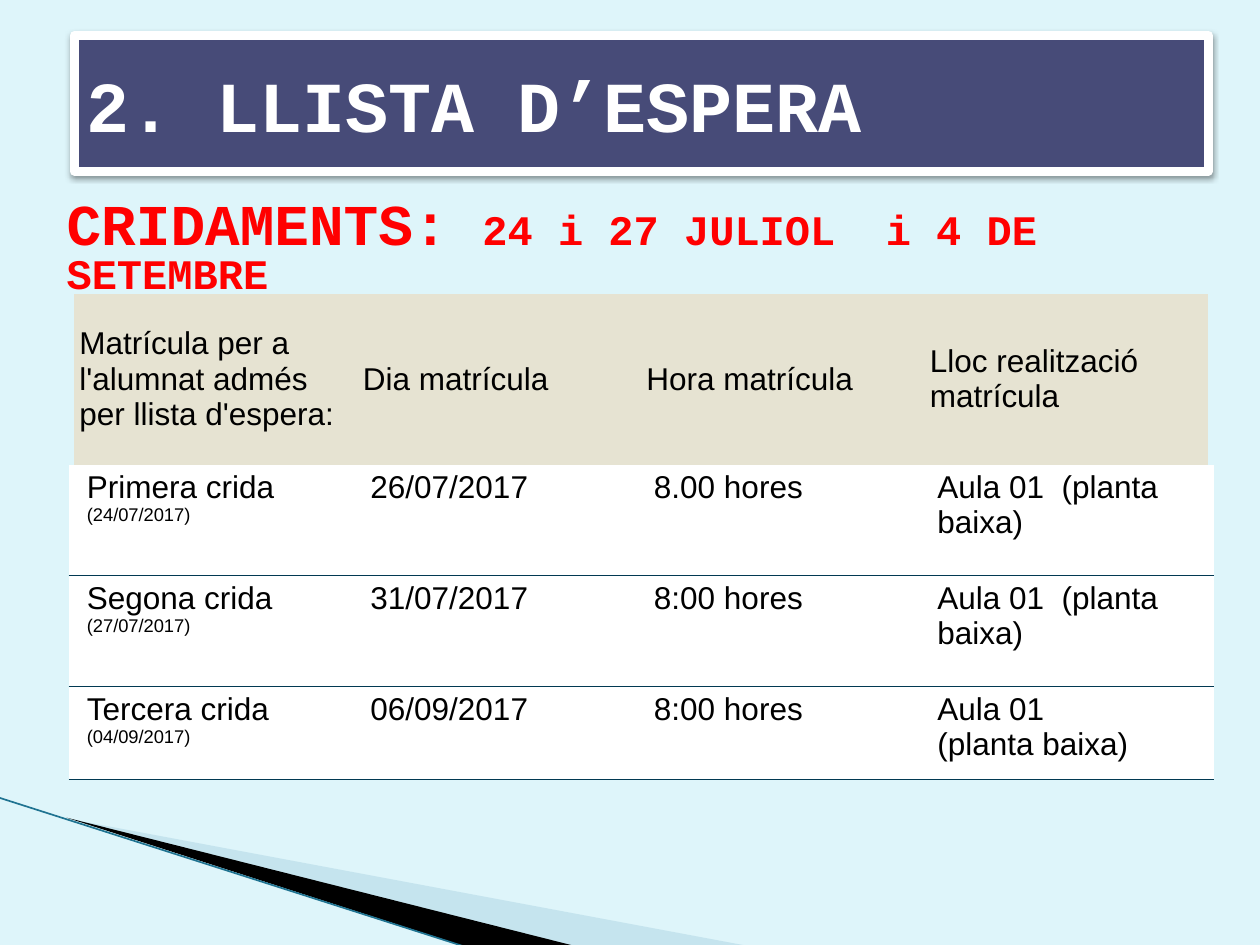
from lxml import etree
from pptx import Presentation
from pptx.dml.color import RGBColor
from pptx.enum.shapes import MSO_CONNECTOR
from pptx.enum.text import MSO_ANCHOR, PP_ALIGN
from pptx.oxml.ns import qn
from pptx.util import Inches, Pt


def color(value):
    return RGBColor.from_string(value)


def set_border(cell, side, value=None, points=0):
    """Draw one side (L, R, T or B) of a cell, or clear it when no colour is given."""
    line = etree.SubElement(cell._tc.get_or_add_tcPr(), qn(f"a:ln{side}"), w=str(Pt(points)))
    if value is None:
        etree.SubElement(line, qn("a:noFill"))
    else:
        fill = etree.SubElement(line, qn("a:solidFill"))
        etree.SubElement(fill, qn("a:srgbClr"), val=value)


deck = Presentation()
deck.slide_width, deck.slide_height = Inches(10), Inches(7.5)
page = deck.slides.add_slide(deck.slide_layouts[5])
page.background.fill.solid()
page.background.fill.fore_color.rgb = color("DEF5FA")

# Corner wedges and the line along them
wedges = [
    ("A0CBDC", 40, [(0.55, 6.5), (5.95, 7.51), (4.56, 7.51)]),
    ("000000", 100, [(0.53, 6.49), (4.57, 7.51), (3.72, 7.52)]),
]
for fill_color, opacity, points in wedges:
    corners = [(Inches(x), Inches(y)) for x, y in points]
    builder = page.shapes.build_freeform(*corners[0], scale=1.0)
    builder.add_line_segments(corners[1:], close=True)
    wedge = builder.convert_to_shape()
    wedge.shadow.inherit = False
    wedge.fill.solid()
    wedge.fill.fore_color.rgb = color(fill_color)
    wedge.line.fill.background()
    if opacity < 100:
        fill_node = wedge._element.spPr.find(f".//{qn('a:srgbClr')}")
        etree.SubElement(fill_node, qn("a:alpha"), val=str(opacity * 1000))

edge = page.shapes.add_connector(
    MSO_CONNECTOR.STRAIGHT, Inches(-0.01), Inches(6.33), Inches(3.71), Inches(7.52))
edge.line.color.rgb = color("1F7391")
edge.line.width = Pt(0.95)
etree.SubElement(edge._element.spPr, qn("a:effectLst"))

# Title banner
title = page.shapes.title
page.shapes._spTree.append(title._element)
title.left, title.top, title.width, title.height = map(Inches, (0.59, 0.28, 9, 1.08))
title.fill.solid()
title.fill.fore_color.rgb = color("474B78")
title.line.color.rgb = color("FFFFFF")
title.line.width = Pt(5)
effects = etree.SubElement(title._element.spPr, qn("a:effectLst"))
shadow = etree.SubElement(effects, qn("a:outerShdw"), blurRad=str(Pt(3.1)),
                          dist=str(Pt(1.6)), dir="5400000", rotWithShape="0")
shadow_color = etree.SubElement(shadow, qn("a:srgbClr"), val="000000")
etree.SubElement(shadow_color, qn("a:alpha"), val="38000")
title.text_frame.text = "2. LLISTA D’ESPERA"
title.text_frame.vertical_anchor = MSO_ANCHOR.MIDDLE
para = title.text_frame.paragraphs[0]
para.alignment = PP_ALIGN.LEFT
para.font.name, para.font.size, para.font.bold = "Courier New", Pt(41), True
para.font.color.rgb = color("FFFFFF")

# Call dates
box = page.shapes.add_textbox(Inches(0.43), Inches(1.55), Inches(9.21), Inches(0.8))
box.text_frame.word_wrap = True
para = box.text_frame.paragraphs[0]
para.line_spacing = 0.8
for text, size in [("CRIDAMENTS: ", 33), ("24 i 27 JULIOL  i 4 DE SETEMBRE", 24)]:
    span = para.add_run()
    span.text = text
    span.font.name, span.font.size, span.font.bold = "Courier New", Pt(size), True
    span.font.color.rgb = color("FF0000")

# Enrolment table
rows = [
    ["Matrícula per a l'alumnat admés per llista d'espera: ", "Dia matrícula",
     "Hora matrícula", "Lloc realització matrícula"],
    ["Primera crida\n(24/07/2017)", "26/07/2017", "8.00 hores", "Aula 01  (planta baixa)"],
    ["Segona crida\n(27/07/2017)", "31/07/2017", "8:00 hores", "Aula 01  (planta baixa)"],
    ["Tercera crida\n(04/09/2017)", "06/09/2017", "8:00 hores", "Aula 01\n(planta baixa)"],
]
table = page.shapes.add_table(
    4, 4, Inches(0.59), Inches(2.33), Inches(9), Inches(3.86)).table
table.first_row = table.horz_banding = False
table._tbl.tblPr.find(qn("a:tableStyleId")).text = "{2D5ABB26-0587-4C30-8999-92F81FD0307C}"
for row, height in zip(table.rows, (1.36, 0.88, 0.88, 0.74)):
    row.height = Inches(height)

for r, texts in enumerate(rows):
    is_header = r == 0
    for c, text in enumerate(texts):
        cell = table.cell(r, c)
        cell.text_frame.text = text
        cell.margin_left = Inches(0.04 if is_header else 0.1)
        cell.margin_right = Inches(0.1)
        cell.margin_top = cell.margin_bottom = Inches(0.03 if is_header else 0.04)
        cell.vertical_anchor = MSO_ANCHOR.MIDDLE if is_header else MSO_ANCHOR.TOP
        for para in cell.text_frame.paragraphs:
            for span in para.runs:
                span.font.name = "Arial"
                span.font.size = Pt(10.5 if span.text.startswith("(2") or
                                    span.text.startswith("(0") else 18)
                span.font.color.rgb = color("000000")
        for side in "LRTB":
            if is_header or (r == 1 and side == "T"):
                set_border(cell, side)
            elif side in "LR":
                set_border(cell, side, "FFFFFF", 7.5)
            else:
                set_border(cell, side, "013952", 0.75)
        cell.fill.solid()
        cell.fill.fore_color.rgb = color("E6E3D2" if is_header else "FFFFFF")

deck.save("out.pptx")
